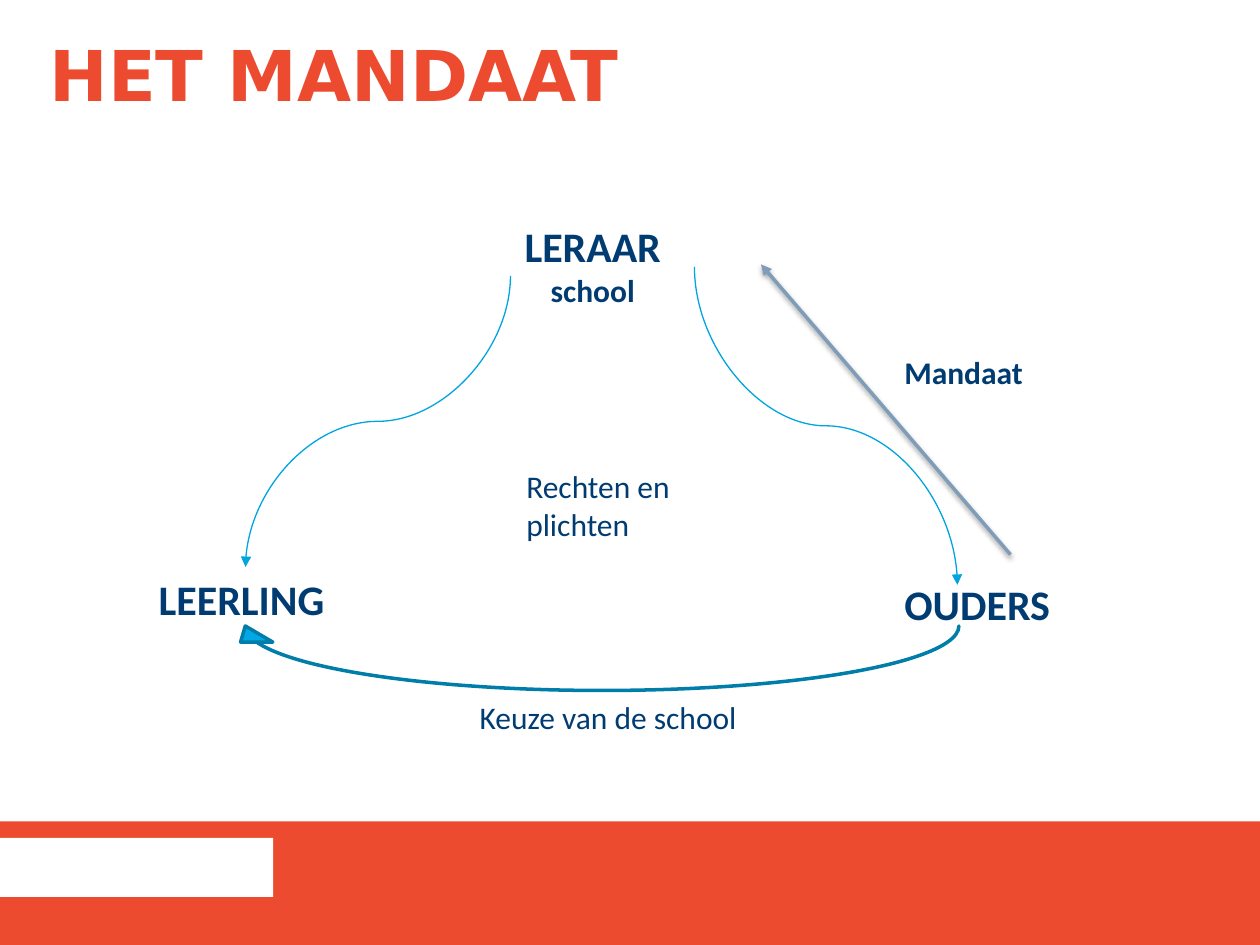
from dataclasses import dataclass

from lxml import etree
from pptx import Presentation
from pptx.dml.color import RGBColor
from pptx.enum import shapes, text
from pptx.oxml.ns import qn
from pptx.util import Cm, Pt


@dataclass(frozen=True)
class Theme:
    title_font: str = "DejaVu Sans"
    body_font: str = "Calibri"
    red: str = "EC4B2F"
    white: str = "FFFFFF"
    navy: str = "003C72"
    grey_blue: str = "7F9DB9"
    cyan: str = "00A5E0"
    arrow_fill: str = "00A9E5"
    arrow_line: str = "007DA9"
    title_size: int = 40
    role_size: int = 24
    label_size: int = 18


T = Theme()

# All positions and sizes are in centimetres.
TITLE = "HET MANDAAT"
FOOTER = [((0, 16.56, 25.4, 2.49), T.red), ((0, 16.89, 5.51, 1.19), T.white)]

# (left, top, width, height), [(text, size)], bold, centred
LABELS = [
    ((9.65, 4.32, 4.6, 2.06), [("LERAAR", T.role_size), ("school", T.label_size)], True, True),
    ((2.95, 11.43, 3.99, 1.3), [("LEERLING", T.role_size)], True, False),
    ((17.98, 11.53, 4.19, 1.3), [("OUDERS", T.role_size)], True, False),
    ((17.98, 6.99, 5.59, 1.02), [("Mandaat", T.label_size)], True, False),
    ((10.36, 9.3, 4.95, 1.8), [("Rechten en plichten", T.label_size)], False, False),
    ((9.42, 13.94, 9.12, 1.02), [("Keuze van de school", T.label_size)], False, False),
]
MANDATE = ((20.37, 11.18), (15.34, 5.33))
SCHOOL_CHOICE = (4.62, 12.62, 14.71, 1.3)
RIGHTS_CURVES = [((10.29, 5.56), (4.95, 11.43)), ((14, 5.38), (19.3, 11.79))]


def cm(values):
    return [Cm(v) for v in values]


def rgb(value):
    return RGBColor.from_string(value)


def style_run(r, font, size, color, bold):
    r.font.name, r.font.size, r.font.bold = font, Pt(size), bold
    r.font.color.rgb = rgb(color)


def add_filled(slide, kind, box, fill, line=None):
    sp = slide.shapes.add_shape(kind, *cm(box))
    sp.shadow.inherit = False
    sp.fill.solid()
    sp.fill.fore_color.rgb = rgb(fill)
    if line:
        sp.line.color.rgb, sp.line.width = rgb(line), Pt(2)
    else:
        sp.line.fill.background()
    return sp


def set_title(slide):
    sp = slide.shapes.title
    sp.left, sp.top, sp.width, sp.height = cm((0, 0, 25.4, 3.18))
    tf = sp.text_frame
    tf.text = TITLE
    tf.vertical_anchor = text.MSO_ANCHOR.MIDDLE
    tf.margin_left, tf.margin_top, tf.margin_right, tf.margin_bottom = cm((1, 0.5, 1, 0.4))
    p = tf.paragraphs[0]
    p.alignment, p.line_spacing = text.PP_ALIGN.LEFT, 0.8
    style_run(p.runs[0], T.title_font, T.title_size, T.red, True)


def add_label(slide, box, lines, bold, centred):
    tf = slide.shapes.add_textbox(*cm(box)).text_frame
    tf.word_wrap = True
    tf.text = "\n".join(line for line, _ in lines)
    for p, (_, size) in zip(tf.paragraphs, lines):
        p.alignment = text.PP_ALIGN.CENTER if centred else text.PP_ALIGN.LEFT
        style_run(p.runs[0], T.body_font, size, T.navy, bold)


def add_arrow(slide, kind, start, end, color, width):
    """Add a connector with a triangle at its end; return it and its effect list."""
    c = slide.shapes.add_connector(kind, *cm(start + end))
    c.line.color.rgb, c.line.width = rgb(color), Pt(width)
    etree.SubElement(c.line._get_or_add_ln(), qn("a:tailEnd"), type="triangle")
    return c, etree.SubElement(c._element.spPr, qn("a:effectLst"))


def add_mandate_arrow(slide):
    _, effects = add_arrow(slide, shapes.MSO_CONNECTOR.STRAIGHT, *MANDATE, T.grey_blue, 2)
    shadow = etree.SubElement(effects, qn("a:outerShdw"), blurRad="40000",
                              dist="20000", dir="5400000", rotWithShape="0")
    color = etree.SubElement(shadow, qn("a:srgbClr"), val="000000")
    etree.SubElement(color, qn("a:alpha"), val="38000")


def add_downward_curve(slide, start, end):
    """Turn a curved connector a quarter so that it leaves and arrives vertically."""
    (x1, y1), (x2, y2) = start, end
    mid_x, mid_y = (x1 + x2) / 2, (y1 + y2) / 2
    half_w, half_h = (y2 - y1) / 2, abs(x2 - x1) / 2
    to_right = x2 > x1
    side = 1 if to_right else -1
    c, _ = add_arrow(slide, shapes.MSO_CONNECTOR.CURVE,
                     (mid_x + side * half_w, mid_y - half_h),
                     (mid_x - side * half_w, mid_y + half_h), T.cyan, 0.75)
    c._element.spPr.find(qn("a:xfrm")).set("rot", str((270 if to_right else 90) * 60000))


def add_school_choice_arrow(slide):
    sp = add_filled(slide, shapes.MSO_SHAPE.CURVED_UP_ARROW, SCHOOL_CHOICE,
                    T.arrow_fill, T.arrow_line)
    for i, value in enumerate((0, 0.5, 0.25)):
        sp.adjustments[i] = value
    sp.rotation = 180
    sp._element.spPr.find(qn("a:xfrm")).set("flipV", "1")


def main():
    prs = Presentation()
    prs.slide_width, prs.slide_height = cm((25.4, 19.05))
    s = prs.slides.add_slide(prs.slide_layouts[5])
    for box, color in FOOTER:
        add_filled(s, shapes.MSO_SHAPE.RECTANGLE, box, color)
    set_title(s)
    for label in LABELS:
        add_label(s, *label)
    add_mandate_arrow(s)
    add_school_choice_arrow(s)
    for start, end in RIGHTS_CURVES:
        add_downward_curve(s, start, end)
    prs.save("out.pptx")


if __name__ == "__main__":
    main()
